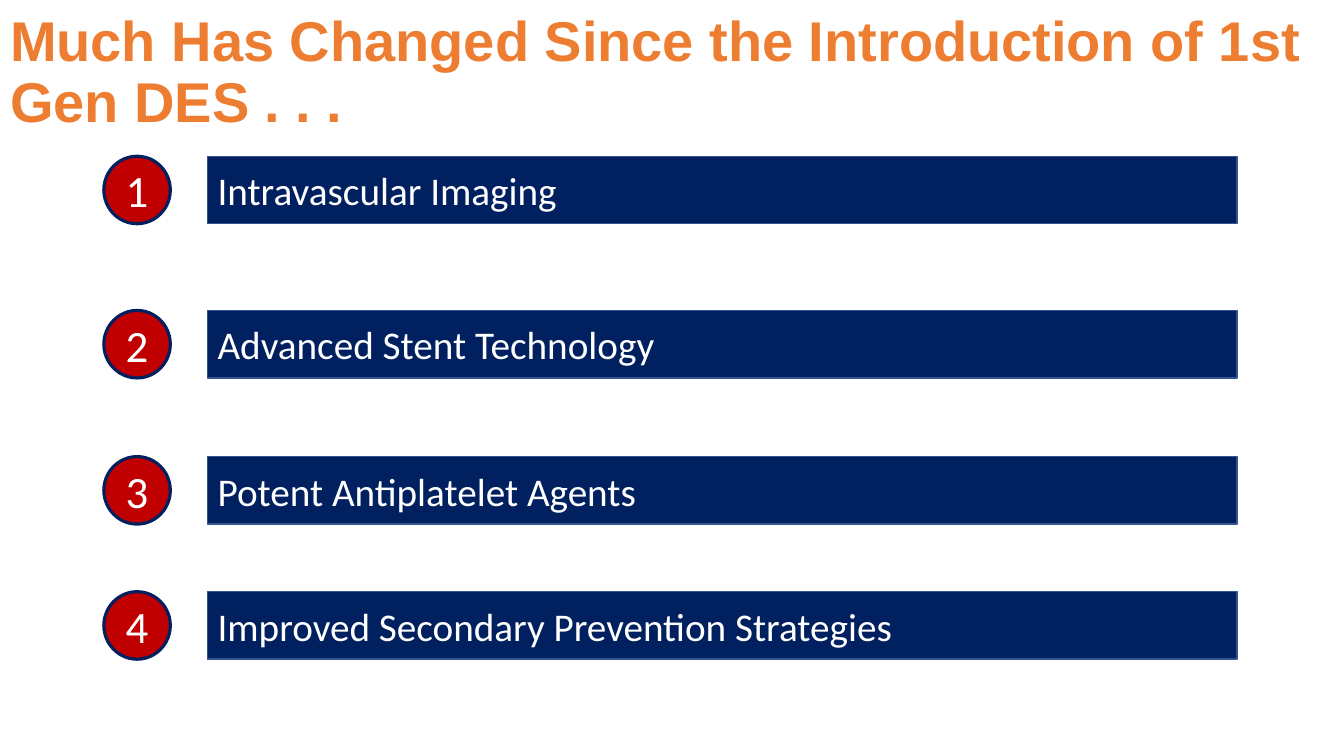
from pptx import Presentation
from pptx.dml.color import RGBColor
from pptx.enum.shapes import MSO_SHAPE
from pptx.enum.text import MSO_ANCHOR, MSO_AUTO_SIZE, PP_ALIGN
from pptx.util import Inches, Pt

RECTANGLE, OVAL = MSO_SHAPE.RECTANGLE, MSO_SHAPE.OVAL
MIDDLE, NO_AUTOFIT = MSO_ANCHOR.MIDDLE, MSO_AUTO_SIZE.NONE
LEFT, CENTER = PP_ALIGN.LEFT, PP_ALIGN.CENTER

TITLE = "Much Has Changed Since the Introduction of 1st Gen DES . . ."
ADVANCES = [
    (1.55, "Intravascular Imaging"),
    (3.08, "Advanced Stent Technology"),
    (4.53, "Potent Antiplatelet Agents"),
    (5.87, "Improved Secondary Prevention Strategies"),
]
COLORS = {
    "title": "ED7D31",
    "navy": "002060",
    "bar_line": "325491",
    "red": "C00000",
    "white": "FFFFFF",
}
ROW_HEIGHT = 0.67
BAR = {"kind": RECTANGLE, "left": 2.06, "width": 10.21, "fill": "navy",
       "line": "bar_line", "line_width": 1, "size": 28, "align": LEFT}
BADGE = {"kind": OVAL, "left": 1.03, "width": 0.66, "fill": "red",
         "line": "navy", "line_width": 2.25, "size": 32, "align": CENTER}


def color(name):
    return RGBColor.from_string(COLORS[name])


def write(shape, text, align, font_color, **font_values):
    frame = shape.text_frame
    frame.text = text
    frame.word_wrap = True
    frame.auto_size = NO_AUTOFIT
    frame.vertical_anchor = MIDDLE
    paragraph = frame.paragraphs[0]
    paragraph.alignment = align
    font = paragraph.runs[0].font
    font.color.rgb = color(font_color)
    for name, value in font_values.items():
        setattr(font, name, value)
    return paragraph


def add_title(slide):
    title = slide.shapes.title
    box = {"left": 0, "top": 0.35, "width": 13.33, "height": 0.77}
    for name, value in box.items():
        setattr(title, name, Inches(value))
    paragraph = write(title, TITLE, LEFT, "title",
                      name="Arial", size=Pt(40), bold=True)
    paragraph.line_spacing = 0.9


def add_label(slide, style, top, text):
    shape = slide.shapes.add_shape(
        style["kind"], Inches(style["left"]), Inches(top),
        Inches(style["width"]), Inches(ROW_HEIGHT))
    shape.shadow.inherit = False
    shape.fill.solid()
    shape.fill.fore_color.rgb = color(style["fill"])
    shape.line.color.rgb = color(style["line"])
    shape.line.width = Pt(style["line_width"])
    write(shape, text, style["align"], "white",
          name="Calibri", size=Pt(style["size"]))


def main():
    presentation = Presentation()
    presentation.slide_width = Inches(13.33)
    presentation.slide_height = Inches(7.5)
    slide = presentation.slides.add_slide(presentation.slide_layouts[5])
    add_title(slide)
    for number, (top, advance) in enumerate(ADVANCES, start=1):
        add_label(slide, BAR, top, advance)
        add_label(slide, BADGE, top, str(number))
    presentation.save("out.pptx")


if __name__ == "__main__":
    main()
